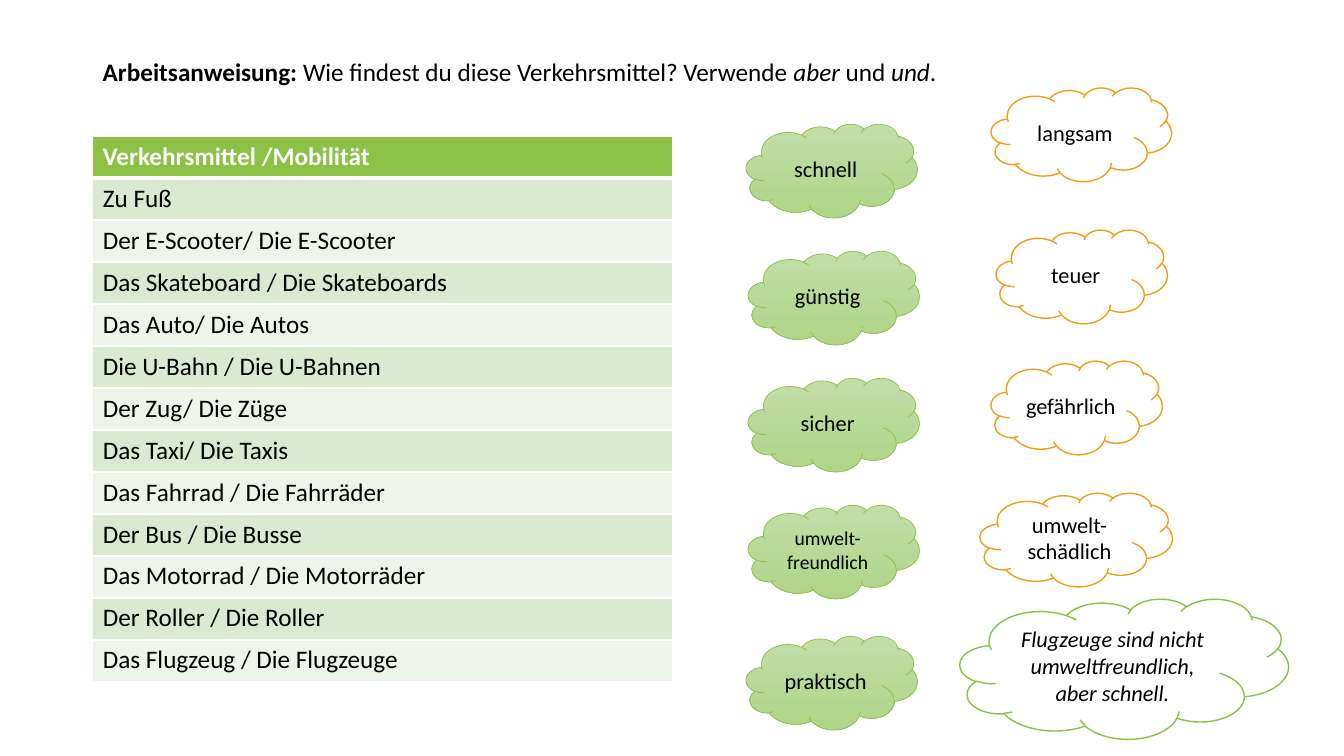
from lxml import etree
from pptx import Presentation
from pptx.dml.color import RGBColor
from pptx.enum.shapes import MSO_SHAPE
from pptx.enum.text import MSO_ANCHOR, PP_ALIGN
from pptx.oxml.ns import qn
from pptx.util import Inches, Pt

CLOUD = MSO_SHAPE.CLOUD
MIDDLE = MSO_ANCHOR.MIDDLE
CENTER = PP_ALIGN.CENTER

GREEN = "8BC145"
ORANGE = "F19D19"
WHITE = "FFFFFF"
BLACK = "000000"
BANDS = ["DAE9CF", "EEF4E9"]
SHADES = ["C2DEA8", "AED588"]


def color(code):
    return RGBColor.from_string(code)


class Sheet:
    font = "Calibri"

    def __init__(self, slide):
        self.shapes = slide.shapes

    def run(self, para, text, size, tint=BLACK, bold=False, italic=False):
        run = para.add_run()
        run.text = text
        font = run.font
        font.name, font.size = self.font, Pt(size)
        font.bold, font.italic = bold, italic
        font.color.rgb = color(tint)

    def text(self, left, top, width, height, parts):
        box = self.shapes.add_textbox(
            Inches(left), Inches(top), Inches(width), Inches(height))
        box.text_frame.word_wrap = False
        para = box.text_frame.paragraphs[0]
        for text, bold, italic in parts:
            self.run(para, text, 18, bold=bold, italic=italic)

    def border(self, cell, side, width):
        props = cell._tc.get_or_add_tcPr()
        line = etree.SubElement(props, qn("a:" + side), w=str(Pt(width)))
        fill = etree.SubElement(line, qn("a:solidFill"))
        etree.SubElement(fill, qn("a:srgbClr"), val=WHITE)

    def table(self, left, top, width, height, rows):
        frame = self.shapes.add_table(
            len(rows), 1, Inches(left), Inches(top), Inches(width), Inches(height))
        for i, text in enumerate(rows):
            cell = frame.table.cell(i, 0)
            head = i == 0
            widths = {"lnL": 1, "lnR": 1, "lnT": 3 if i == 1 else 1,
                      "lnB": 3 if head else 1}
            for side, line in widths.items():
                self.border(cell, side, line)
            cell.fill.solid()
            cell.fill.fore_color.rgb = color(GREEN if head else BANDS[(i - 1) % 2])
            para = cell.text_frame.paragraphs[0]
            self.run(para, text, 18, WHITE if head else BLACK, bold=head)

    def cloud(self, left, top, lines, edge, width=1.7, height=0.93,
              size=16, shaded=False, italic=False):
        shape = self.shapes.add_shape(
            CLOUD, Inches(left), Inches(top), Inches(width), Inches(height))
        shape.shadow.inherit = False
        if shaded:
            shape.fill.gradient()
            shape.fill.gradient_angle = 270
            for stop, shade in zip(shape.fill.gradient_stops, SHADES):
                stop.color.rgb = color(shade)
        else:
            shape.fill.solid()
            shape.fill.fore_color.rgb = color(WHITE)
        shape.line.color.rgb = color(edge)
        shape.line.width = Pt(0.5 if shaded else 1)
        frame = shape.text_frame
        frame.word_wrap = True
        frame.vertical_anchor = MIDDLE
        for i, text in enumerate(lines):
            para = frame.add_paragraph() if i else frame.paragraphs[0]
            para.alignment = CENTER
            self.run(para, text, size, italic=italic)


def main():
    deck = Presentation()
    deck.slide_width, deck.slide_height = Inches(13.33), Inches(7.5)
    sheet = Sheet(deck.slides.add_slide(deck.slide_layouts[6]))

    sheet.table(0.92, 1.35, 5.75, 5.42, [
        "Verkehrsmittel /Mobilität",
        "Zu Fuß",
        "Der E-Scooter/ Die E-Scooter",
        "Das Skateboard / Die Skateboards",
        "Das Auto/ Die Autos",
        "Die U-Bahn / Die U-Bahnen",
        "Der Zug/ Die Züge",
        "Das Taxi/ Die Taxis",
        "Das Fahrrad / Die Fahrräder",
        "Der Bus / Die Busse",
        "Das Motorrad / Die Motorräder",
        "Der Roller / Die Roller",
        "Das Flugzeug / Die Flugzeuge",
    ])
    sheet.text(0.92, 0.51, 8.68, 0.4, [
        ("Arbeitsanweisung: ", True, False),
        ("Wie findest du diese Verkehrsmittel? Verwende ", False, False),
        ("aber", False, True),
        (" und ", False, False),
        ("und", False, True),
        (".", False, False),
    ])

    for left, top, word, size in [
        (7.4, 1.23, "schnell", 16),
        (7.42, 2.49, "günstig", 16),
        (7.42, 3.75, "sicher", 16),
        (7.42, 5.01, "umwelt- freundlich", 14),
        (7.4, 6.31, "praktisch", 16),
    ]:
        sheet.cloud(left, top, [word], GREEN, size=size, shaded=True)

    for left, top, width, lines in [
        (9.83, 0.87, 1.79, ["langsam"]),
        (9.88, 2.28, 1.7, ["teuer"]),
        (9.83, 3.58, 1.7, ["gefährlich"]),
        (9.72, 4.89, 1.91, ["umwelt-", "schädlich"]),
    ]:
        sheet.cloud(left, top, lines, ORANGE, width)

    sheet.cloud(9.52, 5.94, ["Flugzeuge sind nicht umweltfreundlich, aber schnell."],
                GREEN, 3.26, 1.39, italic=True)
    deck.save("out.pptx")


if __name__ == "__main__":
    main()
